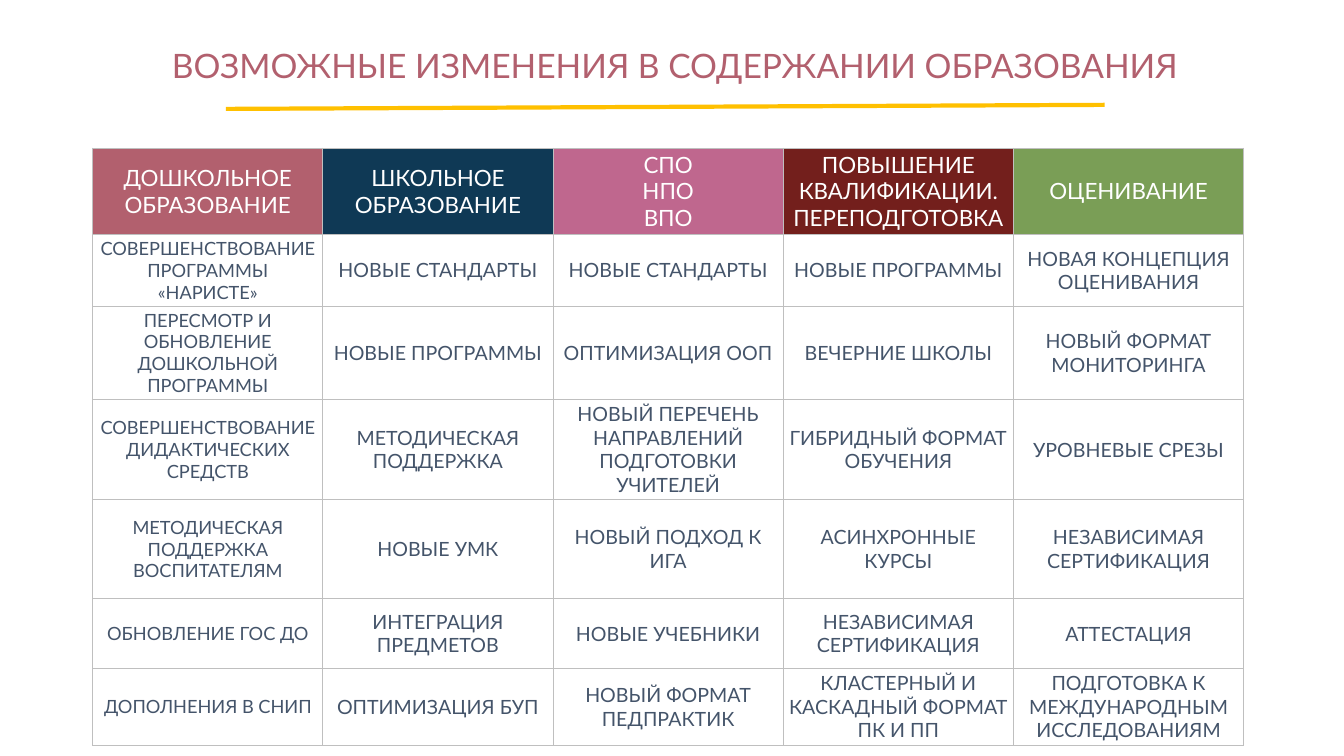
"""Build a slide with a table of possible changes in the content of education."""
from lxml import etree
from pptx import Presentation
from pptx.dml.color import RGBColor
from pptx.enum import shapes, text
from pptx.oxml import ns
from pptx.util import Pt

TITLE = "ВОЗМОЖНЫЕ ИЗМЕНЕНИЯ В СОДЕРЖАНИИ ОБРАЗОВАНИЯ"
HEADERS = [
    ("ДОШКОЛЬНОЕ ОБРАЗОВАНИЕ", "rose"),
    ("ШКОЛЬНОЕ ОБРАЗОВАНИЕ", "navy"),
    ("СПО\nНПО\nВПО", "pink"),
    ("ПОВЫШЕНИЕ КВАЛИФИКАЦИИ.\nПЕРЕПОДГОТОВКА", "maroon"),
    ("ОЦЕНИВАНИЕ", "green"),
]
CHANGES = [
    ("СОВЕРШЕНСТВОВАНИЕ ПРОГРАММЫ «НАРИСТЕ»", "НОВЫЕ СТАНДАРТЫ", "НОВЫЕ СТАНДАРТЫ",
     "НОВЫЕ ПРОГРАММЫ", "НОВАЯ КОНЦЕПЦИЯ ОЦЕНИВАНИЯ"),
    ("ПЕРЕСМОТР И ОБНОВЛЕНИЕ ДОШКОЛЬНОЙ ПРОГРАММЫ", "НОВЫЕ ПРОГРАММЫ", "ОПТИМИЗАЦИЯ ООП",
     "ВЕЧЕРНИЕ ШКОЛЫ", "НОВЫЙ ФОРМАТ МОНИТОРИНГА"),
    ("СОВЕРШЕНСТВОВАНИЕ ДИДАКТИЧЕСКИХ СРЕДСТВ", "МЕТОДИЧЕСКАЯ ПОДДЕРЖКА",
     "НОВЫЙ ПЕРЕЧЕНЬ НАПРАВЛЕНИЙ ПОДГОТОВКИ УЧИТЕЛЕЙ",
     "ГИБРИДНЫЙ ФОРМАТ ОБУЧЕНИЯ", "УРОВНЕВЫЕ СРЕЗЫ"),
    ("МЕТОДИЧЕСКАЯ ПОДДЕРЖКА ВОСПИТАТЕЛЯМ", "НОВЫЕ УМК", "НОВЫЙ ПОДХОД К ИГА",
     "АСИНХРОННЫЕ КУРСЫ", "НЕЗАВИСИМАЯ СЕРТИФИКАЦИЯ"),
    ("ОБНОВЛЕНИЕ ГОС ДО", "ИНТЕГРАЦИЯ ПРЕДМЕТОВ", "НОВЫЕ УЧЕБНИКИ",
     "НЕЗАВИСИМАЯ СЕРТИФИКАЦИЯ", "АТТЕСТАЦИЯ"),
    ("ДОПОЛНЕНИЯ В СНИП", "ОПТИМИЗАЦИЯ БУП", "НОВЫЙ ФОРМАТ ПЕДПРАКТИК",
     "КЛАСТЕРНЫЙ И КАСКАДНЫЙ ФОРМАТ ПК И ПП", "ПОДГОТОВКА К МЕЖДУНАРОДНЫМ ИССЛЕДОВАНИЯМ"),
]
COLORS = {"rose": "B2606E", "navy": "0F3955", "pink": "BF678E", "maroon": "731F1C",
          "green": "7A9E56", "white": "FFFFFF", "slate": "44546A", "gold": "FFC000",
          "border": "BFBFBF"}
FONT = "Lato"
TABLE_LEFT, TABLE_TOP, COLUMN_WIDTH = 66.2, 105.8, 164.45
ROW_HEIGHTS = [61.4, 50, 65.7, 71.4, 70.7, 50, 54.3]
CELL_FORMAT = {"margin_left": Pt(3.6), "margin_right": Pt(3.6), "margin_top": Pt(2.16),
               "margin_bottom": Pt(2.16), "vertical_anchor": text.MSO_ANCHOR.MIDDLE}


def color(name):
    """Return the named colour."""
    return RGBColor.from_string(COLORS[name])


def write(frame, words, size, color_name):
    """Fill a text frame with centred paragraphs."""
    frame.text = words
    for para in frame.paragraphs:
        para.alignment = text.PP_ALIGN.CENTER
        for span in para.runs:
            span.font.name, span.font.size = FONT, Pt(size)
            span.font.color.rgb = color(color_name)


def add_borders(cell):
    """Outline all four sides of a cell."""
    properties = cell._tc.get_or_add_tcPr()
    for side in "LRTB":
        line = etree.SubElement(properties, ns.qn(f"a:ln{side}"), w=str(Pt(0.75)))
        fill = etree.SubElement(line, ns.qn("a:solidFill"))
        etree.SubElement(fill, ns.qn("a:srgbClr"), val=COLORS["border"])


def add_changes_table(page):
    """Add the table with coloured headers and plain body cells."""
    grid = [[words for words, _ in HEADERS], *CHANGES]
    table = page.shapes.add_table(
        len(grid), len(HEADERS), Pt(TABLE_LEFT), Pt(TABLE_TOP),
        Pt(COLUMN_WIDTH * len(HEADERS)), Pt(sum(ROW_HEIGHTS))).table
    table.first_row = table.horz_banding = False
    for column in table.columns:
        column.width = Pt(COLUMN_WIDTH)
    for r, (row, height) in enumerate(zip(grid, ROW_HEIGHTS)):
        table.rows[r].height = Pt(height)
        for c, words in enumerate(row):
            cell = table.cell(r, c)
            for name, value in CELL_FORMAT.items():
                setattr(cell, name, value)
            add_borders(cell)
            if r == 0:
                cell.fill.solid()
                cell.fill.fore_color.rgb = color(HEADERS[c][1])
                write(cell.text_frame, words, 16, "white")
            else:
                cell.fill.background()
                write(cell.text_frame, words, 13 if c == 0 else 14, "slate")


def main():
    """Compose and save the slide."""
    deck = Presentation()
    deck.slide_width, deck.slide_height = Pt(960), Pt(540)
    page = deck.slides.add_slide(deck.slide_layouts[6])
    add_changes_table(page)

    title = page.shapes.add_textbox(Pt(115.2), Pt(28.8), Pt(733.7), Pt(36))
    title.text_frame.word_wrap = False
    title.text_frame.auto_size = text.MSO_AUTO_SIZE.SHAPE_TO_FIT_TEXT
    write(title.text_frame, TITLE, 24, "rose")

    underline = page.shapes.add_connector(
        shapes.MSO_CONNECTOR.STRAIGHT, Pt(789.1), Pt(74.9), Pt(161.3), Pt(77.8))
    underline.line.color.rgb = color("gold")
    underline.line.width = Pt(3)
    etree.SubElement(underline._element.spPr, ns.qn("a:effectLst"))
    deck.save("out.pptx")


if __name__ == "__main__":
    main()
